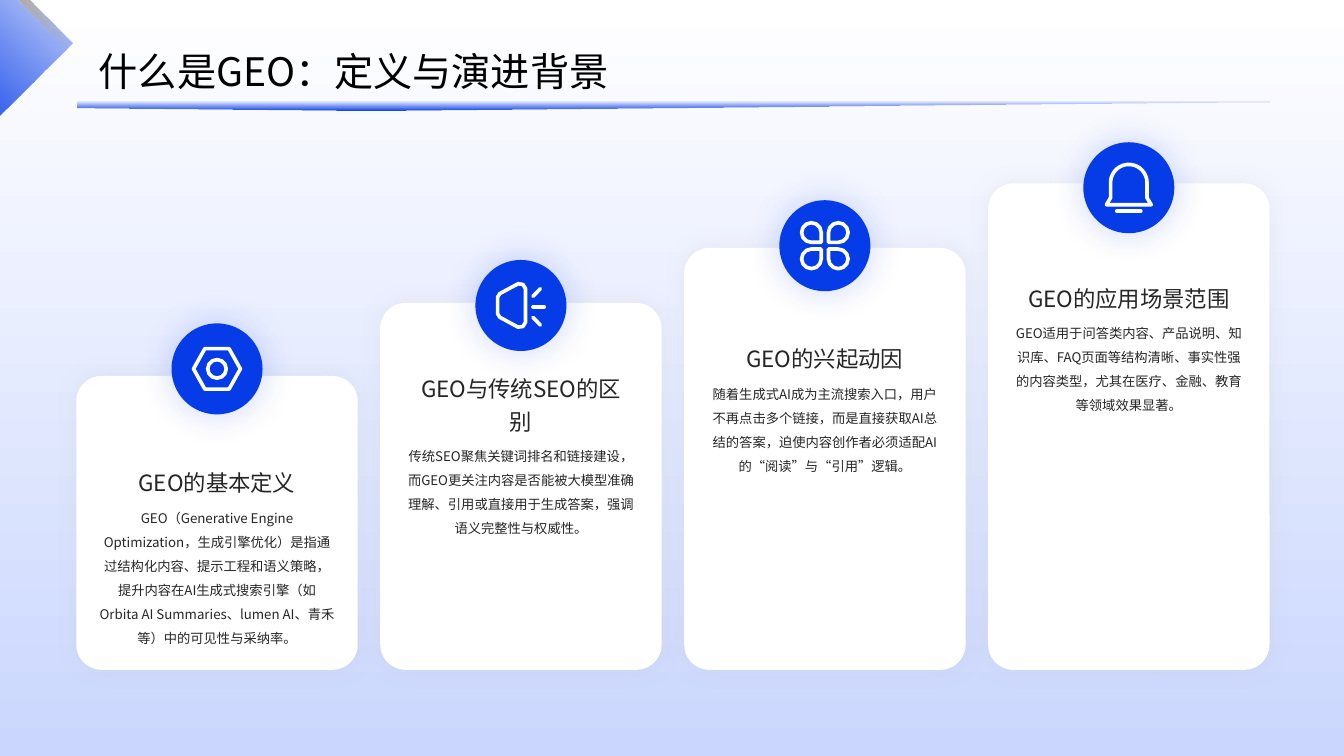
import math
from dataclasses import dataclass

import lxml.etree
import pptx
import pptx.dml.color
import pptx.enum.shapes
import pptx.enum.text
import pptx.oxml.ns
import pptx.util

Pt = pptx.util.Pt
Shape = pptx.enum.shapes.MSO_SHAPE
Align = pptx.enum.text.PP_ALIGN
Anchor = pptx.enum.text.MSO_ANCHOR


@dataclass(frozen=True)
class Theme:
    font: str = "Noto Sans CJK SC"
    white: str = "FFFFFF"
    blue: str = "063CE8"
    pale: str = "CAD6FE"
    gold: str = "C6AB6A"
    grey: str = "BFBFBF"
    ink: str = "262626"
    black: str = "000000"
    title_size: float = 28
    heading_size: float = 16
    body_size: float = 9.5
    stroke: float = 2.6


THEME = Theme()


def rgb(color):
    return pptx.dml.color.RGBColor.from_string(color)


def add_element(parent, tag, **attributes):
    element = lxml.etree.SubElement(parent, pptx.oxml.ns.qn(tag))
    for name, value in attributes.items():
        element.set(name, str(value))
    return element


def add_preset(page, kind, left, top, width, height, color=None):
    shape = page.shapes.add_shape(kind, Pt(left), Pt(top), Pt(width), Pt(height))
    shape.shadow.inherit = False
    shape.line.fill.background()
    if color:
        shape.fill.solid()
        shape.fill.fore_color.rgb = rgb(color)
    else:
        shape.fill.background()
    return shape


def add_outline(page, points):
    corners = [(Pt(x), Pt(y)) for x, y in points]
    builder = page.shapes.build_freeform(*corners[0])
    builder.add_line_segments(corners[1:], close=True)
    shape = builder.convert_to_shape()
    shape.shadow.inherit = False
    shape.fill.background()
    shape.line.fill.background()
    return shape


def set_gradient(shape, start, end, clockwise, fade=False):
    shape.fill.gradient()
    shape.fill.gradient_angle = (360 - clockwise) % 360
    for stop, color in zip(shape.fill.gradient_stops, (start, end)):
        stop.color.rgb = rgb(color)
    if fade:
        last = shape.element.xpath(".//a:gs/a:srgbClr")[-1]
        add_element(last, "a:alpha", val=0)


def add_glow(shape, color, blur):
    effects = shape.element.xpath("./p:spPr/a:effectLst")[0]
    shadow = add_element(effects, "a:outerShdw", blurRad=Pt(blur), dist=0,
                         dir=0, algn="ctr", rotWithShape=0)
    tint = add_element(shadow, "a:srgbClr", val=color)
    add_element(tint, "a:alpha", val=20000)


def set_stroke(shape):
    shape.line.color.rgb = rgb(THEME.white)
    shape.line.width = Pt(THEME.stroke)
    line = shape.element.xpath("./p:spPr/a:ln")[0]
    line.set("cap", "rnd")
    add_element(line, "a:round")


def add_stroke_line(page, x1, y1, x2, y2):
    line = page.shapes.add_connector(pptx.enum.shapes.MSO_CONNECTOR.STRAIGHT,
                                     Pt(x1), Pt(y1), Pt(x2), Pt(y2))
    set_stroke(line)
    add_element(line.element.spPr, "a:effectLst")


def add_text(page, box, text, size, color, spacing, align, anchor):
    frame = page.shapes.add_textbox(*map(Pt, box)).text_frame
    frame.word_wrap = True
    frame.vertical_anchor = anchor
    frame.margin_left = frame.margin_right = frame.margin_top = frame.margin_bottom = 0
    para = frame.paragraphs[0]
    para.alignment = align
    para.line_spacing = spacing
    span = para.add_run()
    span.text = text
    span.font.size = Pt(size)
    span.font.name = THEME.font
    span.font.color.rgb = rgb(color)
    add_element(span.font._element, "a:ea", typeface=THEME.font)


def draw_nut(page, x, y):
    hexagon = add_preset(page, Shape.HEXAGON, x - 16.75, y - 14.5, 33.5, 29)
    hexagon.adjustments[0] = 0.28
    set_stroke(hexagon)
    set_stroke(add_preset(page, Shape.OVAL, x - 6.6, y - 6.6, 13.2, 13.2))


def draw_horn(page, x, y):
    upper = [(-16.6, -6), (-15, -8.5), (-2, -15.5), (1.5, -15), (3.3, -12)]
    lower = [(dx, -dy) for dx, dy in reversed(upper)]
    set_stroke(add_outline(page, [(x + dx, y + dy) for dx, dy in upper + lower]))
    middle = y + 1
    add_stroke_line(page, x + 8.6, middle, x + 16.6, middle)
    for side in (-1, 1):
        add_stroke_line(page, x + 8.6, middle + side * 7.5,
                        x + 13.9, middle + side * 13)


def draw_petals(page, x, y):
    for column, row, turn in ((-1, -1, 90), (1, -1, 180), (1, 1, 270), (-1, 1, 0)):
        petal = add_preset(page, Shape.TEAR, x + column * 9.6 - 7,
                           y + row * 9.4 - 7, 14, 14)
        petal.rotation = turn
        set_stroke(petal)


def draw_bell(page, x, y):
    dome = [(x - 13 * math.cos(math.radians(angle)),
             y - 3.6 - 13 * math.sin(math.radians(angle)))
            for angle in range(0, 181, 6)]
    skirt = [(x + 13, y + 7.2), (x + 16, y + 12.2),
             (x - 16, y + 12.2), (x - 13, y + 7.2)]
    set_stroke(add_outline(page, dome + skirt))
    add_stroke_line(page, x - 8.6, y + 16.7, x + 8.6, y + 16.7)


def draw_card(page, box, badge_top, heading_top, heading, body, draw_icon):
    left, top, width, height = box
    center, badge = left + width / 2, 65
    panel = add_preset(page, Shape.ROUNDED_RECTANGLE, *box, THEME.white)
    panel.adjustments[0] = 0.09
    add_glow(panel, THEME.grey, 15)
    circle = add_preset(page, Shape.OVAL, center - badge / 2, badge_top,
                        badge, badge, THEME.blue)
    add_glow(circle, THEME.blue, 25)
    draw_icon(page, center, badge_top + badge / 2)
    add_text(page, (center - 78.5, heading_top, 157, 52.6), heading,
             THEME.heading_size, THEME.ink, 1.2, Align.CENTER, Anchor.BOTTOM)
    body_top = heading_top + 57
    add_text(page, (center - 84, body_top, 168, top + height - 20.5 - body_top), body,
             THEME.body_size, THEME.ink, 1.5, Align.CENTER, Anchor.TOP)


def draw_corner(page, tip_x, tip_y):
    diamond = [(0, 0), (-53.3, 53.3), (-101.5, 53.3), (-101.5, -83.5), (-92.2, -92.9)]
    stripe = [(-64.1, -56.2), (-59.8, -60.5), (0, 0), (-4.3, 4.3)]
    cosine = math.cos(math.radians(45))
    for points, pivot, color, angle in (
            (diamond, (-84.6, -7.9), THEME.blue, 270),
            (stripe, (-32, -28), THEME.gold, 0)):
        level = []
        for x, y in points:
            dx, dy = x - pivot[0], y - pivot[1]
            level.append((tip_x + pivot[0] + (dx + dy) * cosine,
                          tip_y + pivot[1] + (dy - dx) * cosine))
        shape = add_outline(page, level)
        shape.rotation = 45
        set_gradient(shape, color, color, angle, fade=True)


def draw_header(page, box, title):
    left, top, width, height = box
    add_text(page, (left + 15.4, top, 701, 47), title, THEME.title_size,
             THEME.black, 1.3, Align.LEFT, Anchor.MIDDLE)
    draw_corner(page, 51.3, 30.4)
    rule_top, right = top + height, left + width
    rule = add_outline(page, [(left, rule_top), (left, rule_top + 4.5),
                              (left + 222, rule_top + 6.6),
                              (right, rule_top + 0.8), (right, rule_top)])
    set_gradient(rule, THEME.blue, THEME.blue, 270, fade=True)


CARDS = [
    (268.5, 231, 301.7, "GEO的基本定义",
     "GEO（Generative Engine Optimization，生成引擎优化）是指通过结构化内容、提示工程和语义策略，"
     "提升内容在AI生成式搜索引擎（如Orbita AI Summaries、lumen AI、青禾等）中的可见性与采纳率。", draw_nut),
    (216.4, 185.7, 257.8, "GEO与传统SEO的区别",
     "传统SEO聚焦关键词排名和链接建设，而GEO更关注内容是否能被大模型准确理解、引用或直接用于生成答案，"
     "强调语义完整性与权威性。", draw_horn),
    (177.1, 143, 213.1, "GEO的兴起动因",
     "随着生成式AI成为主流搜索入口，用户不再点击多个链接，而是直接获取AI总结的答案，"
     "迫使内容创作者必须适配AI的“阅读”与“引用”逻辑。", draw_petals),
    (131, 101.6, 169.9, "GEO的应用场景范围",
     "GEO适用于问答类内容、产品说明、知识库、FAQ页面等结构清晰、事实性强的内容类型，"
     "尤其在医疗、金融、教育等领域效果显著。", draw_bell),
]


def main():
    deck = pptx.Presentation()
    deck.slide_width, deck.slide_height = Pt(960), Pt(540)
    page = deck.slides.add_slide(deck.slide_layouts[6])
    backdrop = add_preset(page, Shape.RECTANGLE, 0, 0, 960, 540)
    set_gradient(backdrop, THEME.white, THEME.pale, 90)
    for index, (top, *content) in enumerate(CARDS):
        draw_card(page, (54.5 + index * 217.1, top, 201, 478.5 - top), *content)
    draw_header(page, (55.2, 22.3, 851.5, 50.2), "什么是GEO：定义与演进背景")
    deck.save("out.pptx")


if __name__ == "__main__":
    main()
